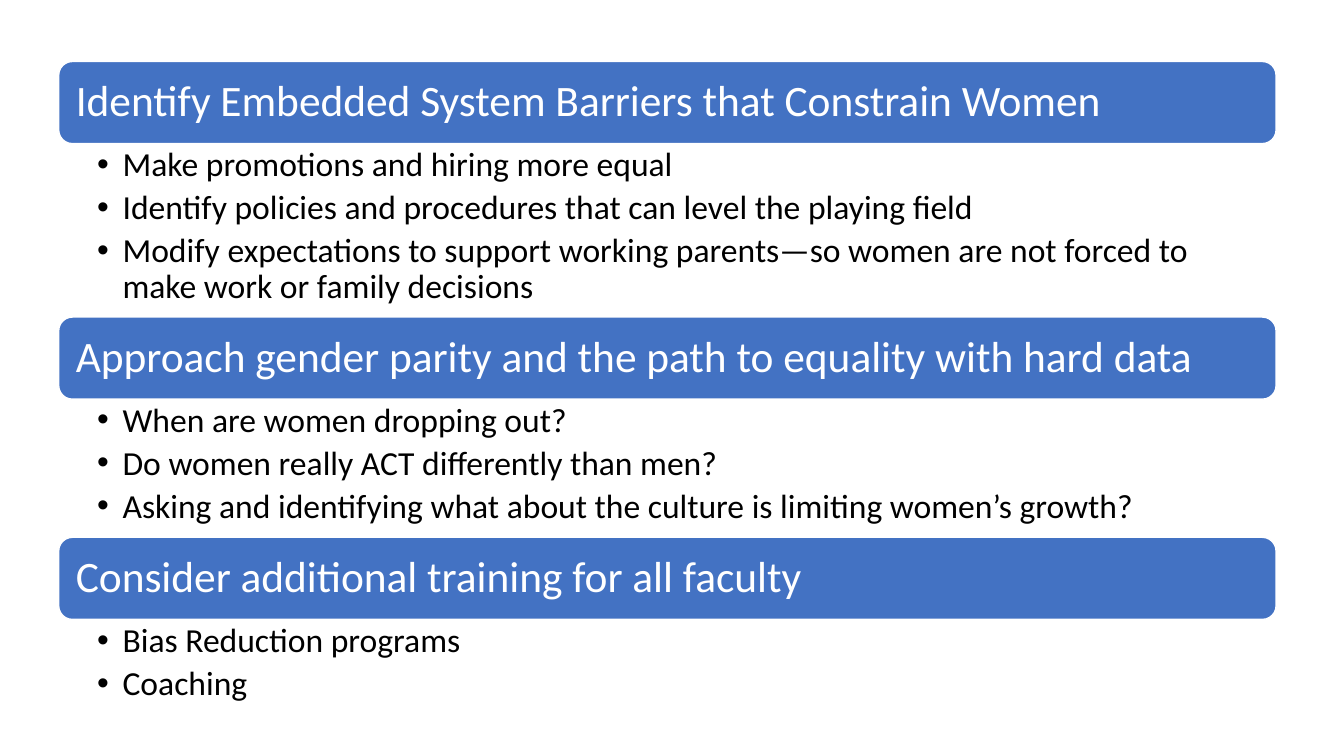
from lxml.etree import SubElement
from pptx import Presentation
from pptx.dml.color import RGBColor
from pptx.enum.shapes import MSO_SHAPE
from pptx.enum.text import MSO_ANCHOR, PP_ALIGN
from pptx.oxml.ns import qn
from pptx.util import Cm, Pt

BLUE = RGBColor(0x43, 0x72, 0xC3)
WHITE = RGBColor(0xFF, 0xFF, 0xFF)
BLACK = RGBColor(0x00, 0x00, 0x00)

LEFT, TOP, WIDTH = Cm(1.48), Cm(1.55), Cm(30.68)
BAR_HEIGHT = Cm(2.07)
INDENT = Cm(0.64)

BAR_FRAME = {
    "word_wrap": True, "vertical_anchor": MSO_ANCHOR.MIDDLE,
    "margin_left": Cm(0.33), "margin_right": Cm(0.33),
    "margin_top": Cm(0.33), "margin_bottom": Cm(0.33),
}
LIST_FRAME = {
    "word_wrap": True, "vertical_anchor": MSO_ANCHOR.TOP,
    "margin_left": Cm(0.97), "margin_right": Cm(0.6),
    "margin_top": Cm(0.1), "margin_bottom": Cm(0.1),
}
BAR_FONT = {"name": "Calibri", "size": Pt(31)}
LIST_FONT = {"name": "Calibri", "size": Pt(24)}

SECTIONS = [
    ("Identify Embedded System Barriers that Constrain Women", Cm(4.37), [
        "Make promotions and hiring more equal",
        "Identify policies and procedures that can level the playing field",
        "Modify expectations to support working parents—so women are not "
        "forced to make work or family decisions",
    ]),
    ("Approach gender parity and the path to equality with hard data", Cm(3.48), [
        "When are women dropping out?",
        "Do women really ACT differently than men?",
        "Asking and identifying what about the culture is limiting women’s growth?",
    ]),
    ("Consider additional training for all faculty", Cm(2.31), [
        "Bias Reduction programs",
        "Coaching",
    ]),
]


def apply_format(target, values):
    """Set every attribute named in values on the target."""
    for name, value in values.items():
        setattr(target, name, value)


def add_bullet(para):
    """Give the paragraph a black hanging bullet."""
    properties = para._p.get_or_add_pPr()
    properties.set("marL", str(INDENT))
    properties.set("indent", str(-INDENT))
    color = SubElement(properties, qn("a:buClr"))
    SubElement(color, qn("a:srgbClr"), val=str(BLACK))
    SubElement(properties, qn("a:buFont"), typeface="Arial")
    SubElement(properties, qn("a:buChar"), char="•")


def write_text(para, text, font, color):
    """Write one left-aligned run in the given font and colour."""
    apply_format(para, {"alignment": PP_ALIGN.LEFT, "line_spacing": 0.9})
    span = para.add_run()
    span.text = text
    apply_format(span.font, font)
    span.font.color.rgb = color


def add_bar(page, left, top, width, height, heading):
    """Draw a rounded bar that holds a section heading."""
    bar = page.shapes.add_shape(
        MSO_SHAPE.ROUNDED_RECTANGLE, left, top, width, height)
    bar.shadow.inherit = False
    bar.fill.solid()
    bar.fill.fore_color.rgb = BLUE
    bar.line.color.rgb = WHITE
    bar.line.width = Pt(1)
    apply_format(bar.text_frame, BAR_FRAME)
    write_text(bar.text_frame.paragraphs[0], heading, BAR_FONT, WHITE)


def add_list(page, left, top, width, height, items):
    """Place the bulleted points of a section."""
    box = page.shapes.add_textbox(left, top, width, height)
    frame = box.text_frame
    apply_format(frame, LIST_FRAME)
    for index, item in enumerate(items):
        para = frame.add_paragraph() if index else frame.paragraphs[0]
        para.level = 1
        add_bullet(para)
        para.space_before = Pt(4.8 if index else 0)
        write_text(para, item, LIST_FONT, BLACK)


def add_section(page, left, top, width, list_height, heading, items):
    """Stack a heading bar and its list, and return the bottom edge."""
    add_bar(page, left, top, width, BAR_HEIGHT, heading)
    list_top = top + BAR_HEIGHT
    add_list(page, left, list_top, width, list_height, items)
    return list_top + list_height


def main():
    """Build the deck and save it."""
    deck = Presentation()
    deck.slide_width, deck.slide_height = Cm(33.87), Cm(19.05)
    page = deck.slides.add_slide(deck.slide_layouts[6])
    top = TOP
    for heading, list_height, items in SECTIONS:
        top = add_section(page, LEFT, top, WIDTH, list_height, heading, items)
    deck.save("out.pptx")


if __name__ == "__main__":
    main()
